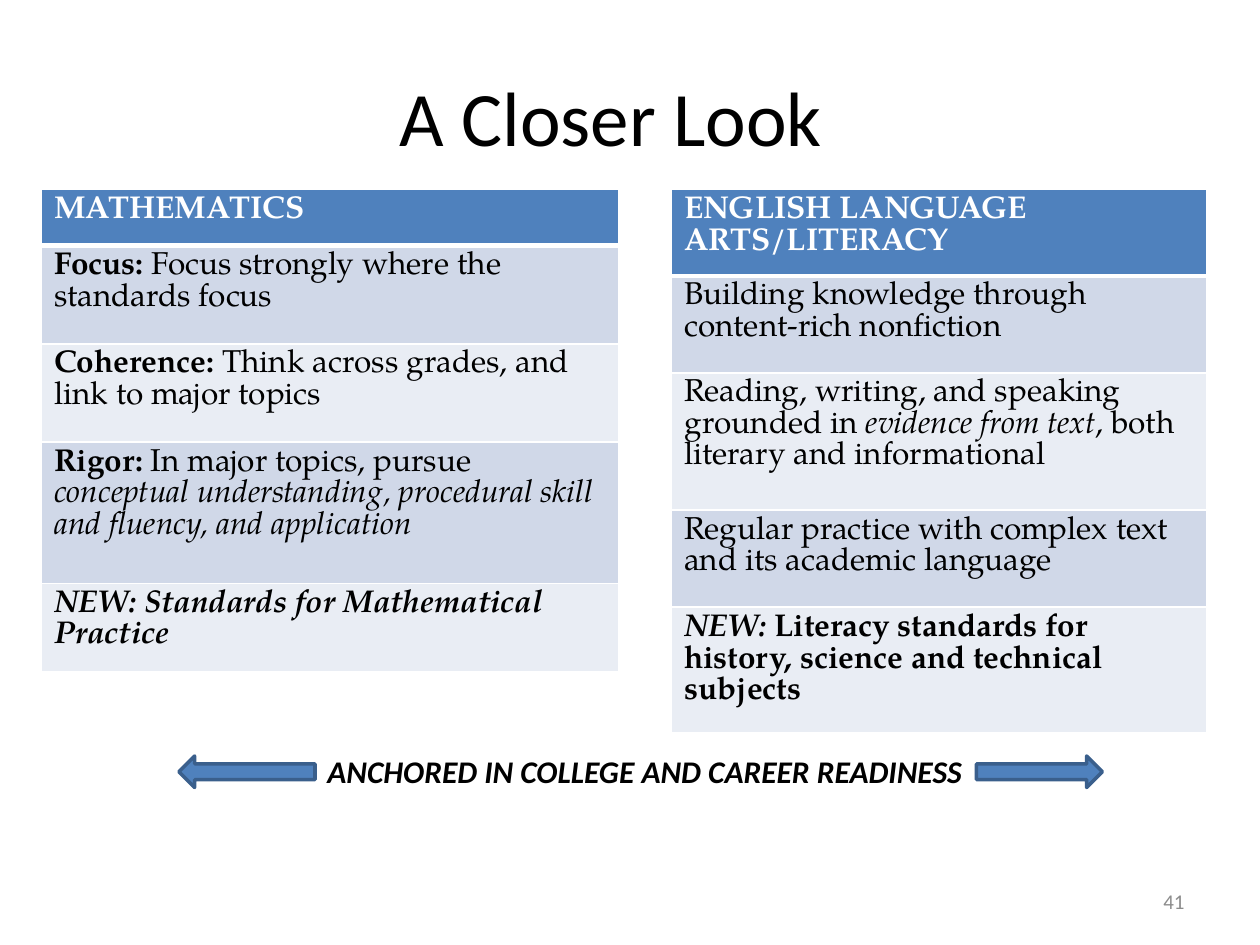
from dataclasses import dataclass
from typing import NamedTuple

from lxml.etree import SubElement
from pptx import Presentation
from pptx.dml.color import RGBColor
from pptx.enum.shapes import MSO_SHAPE as Shape
from pptx.enum.text import MSO_ANCHOR as Anchor, PP_ALIGN as Align
from pptx.oxml.ns import qn
from pptx.util import Inches, Pt


@dataclass(frozen=True)
class Theme:
    heading_font: str = "Calibri"
    table_font: str = "TeX Gyre Pagella"
    black: str = "000000"
    white: str = "FFFFFF"
    grey: str = "8C8C8C"
    blue: str = "4F81BD"
    outline: str = "3A5F8C"
    bands: tuple[str, str] = ("D0D8E8", "E9EDF4")
    title: int = 44
    body: int = 18
    small: int = 12


THEME = Theme()


class Run(NamedTuple):
    text: str
    bold: bool = False
    italic: bool = False


Paragraphs = list[list[Run]]


class Column(NamedTuple):
    left: float
    width: float
    heights: list[float]
    cells: list[Paragraphs]


TABLE_TOP = 1.5
MATHEMATICS = Column(0.33, 4.58, [0.45, 0.78, 0.78, 1.12, 0.7], [
    [[Run("MATHEMATICS", bold=True)]],
    [[Run("Focus: ", bold=True), Run("Focus strongly where the standards focus")]],
    [[Run("Coherence: ", bold=True),
      Run("Think across grades, and link to major topics")]],
    [[Run("Rigor: ", bold=True), Run("In major topics, pursue "),
      Run("conceptual understanding, procedural skill and fluency, and application",
          italic=True)]],
    [[Run("NEW: Standards for Mathematical Practice", bold=True, italic=True)]],
])
LITERACY = Column(5.33, 4.25, [0.69, 0.77, 1.09, 0.77, 1.0], [
    [[Run("ENGLISH LANGUAGE ARTS/LITERACY", bold=True)]],
    [[Run("Building knowledge through content‐rich nonfiction")]],
    [[Run("Reading, writing, and speaking")],
     [Run("grounded in "), Run("evidence from text", italic=True),
      Run(", both literary and informational")]],
    [[Run("Regular practice with complex text and its academic language")]],
    [[Run("NEW: ", bold=True, italic=True),
      Run("Literacy standards for history, science and technical subjects",
          bold=True)]],
])


def rgb(value: str) -> RGBColor:
    return RGBColor.from_string(value)


def write(tf, paragraphs: Paragraphs, *, font=THEME.heading_font, size=THEME.body,
          color=THEME.black, align=Align.LEFT, spacing=None) -> None:
    tf.word_wrap = True
    for i, runs in enumerate(paragraphs):
        p = tf.paragraphs[0] if i == 0 else tf.add_paragraph()
        p.alignment = align
        p.line_spacing = spacing
        for run in runs:
            r = p.add_run()
            r.text = run.text
            r.font.name, r.font.size = font, Pt(size)
            r.font.bold, r.font.italic = run.bold, run.italic
            r.font.color.rgb = rgb(color)


def add_text(s, box: tuple, run: Run, anchor=Anchor.TOP, **style) -> None:
    tf = s.shapes.add_textbox(*map(Inches, box)).text_frame
    tf.vertical_anchor = anchor
    write(tf, [[run]], **style)


def set_borders(cell, top: int, bottom: int) -> None:
    """Draw white borders, one point wide at the sides; call before the fill."""
    tc_pr = cell._tc.get_or_add_tcPr()
    for side, width in (("L", 1), ("R", 1), ("T", top), ("B", bottom)):
        ln = SubElement(tc_pr, qn(f"a:ln{side}"), w=str(Pt(width)))
        fill = SubElement(ln, qn("a:solidFill"))
        SubElement(fill, qn("a:srgbClr"), val=THEME.white)


def add_column(s, column: Column) -> None:
    frame = s.shapes.add_table(
        len(column.cells), 1, Inches(column.left), Inches(TABLE_TOP),
        Inches(column.width), Inches(sum(column.heights)))
    table = frame.table
    for i, (height, paragraphs) in enumerate(zip(column.heights, column.cells)):
        table.rows[i].height = Inches(height)
        cell = table.cell(i, 0)
        header = i == 0
        set_borders(cell, top=3 if i == 1 else 1, bottom=3 if header else 1)
        cell.fill.solid()
        cell.fill.fore_color.rgb = rgb(
            THEME.blue if header else THEME.bands[(i - 1) % 2])
        write(cell.text_frame, paragraphs, font=THEME.table_font,
              color=THEME.white if header else THEME.black,
              spacing=Pt(THEME.body))


def add_arrow(s, kind: Shape, left: float, width: float) -> None:
    sp = s.shapes.add_shape(kind, Inches(left), Inches(6), Inches(width), Inches(0.25))
    sp.shadow.inherit = False
    sp.fill.solid()
    sp.fill.fore_color.rgb = rgb(THEME.blue)
    sp.line.color.rgb = rgb(THEME.outline)
    sp.line.width = Pt(2)


def main() -> None:
    prs = Presentation()
    prs.slide_width, prs.slide_height = Inches(10), Inches(7.5)
    s = prs.slides.add_slide(prs.slide_layouts[6])
    for column in (MATHEMATICS, LITERACY):
        add_column(s, column)
    add_text(s, (0.42, 0.5, 9, 1.25), Run("A Closer Look "),
             size=THEME.title, align=Align.CENTER)
    add_text(s, (2.5, 5.92, 5.33, 0.4),
             Run("ANCHORED IN COLLEGE AND CAREER READINESS", bold=True, italic=True))
    add_arrow(s, Shape.LEFT_ARROW, 1.42, 1.08)
    add_arrow(s, Shape.RIGHT_ARROW, 7.75, 1)
    add_text(s, (7.17, 6.95, 2.33, 0.4), Run("41"), anchor=Anchor.MIDDLE,
             size=THEME.small, color=THEME.grey, align=Align.RIGHT)
    prs.save("out.pptx")


if __name__ == "__main__":
    main()
